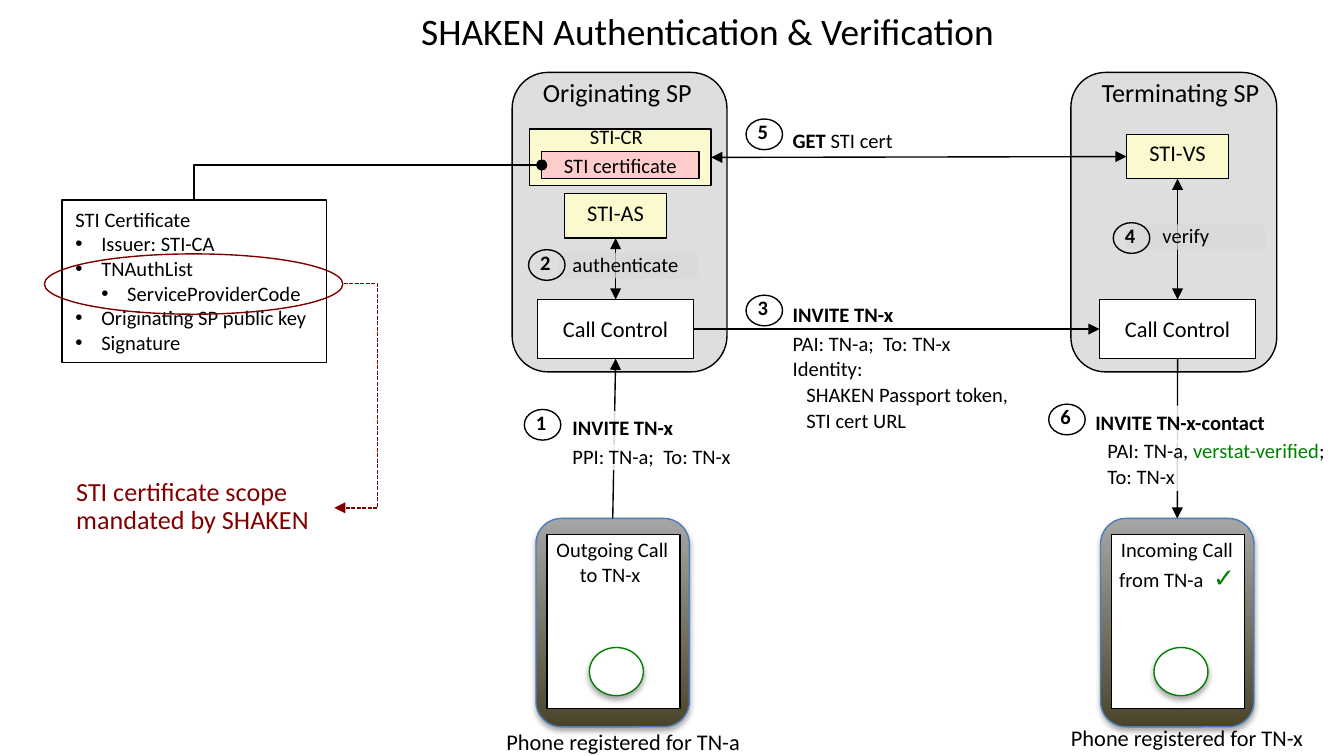
import pptx
import pptx.util
import pptx.dml.color
import pptx.enum.dml
import pptx.enum.shapes
import pptx.enum.text
import pptx.oxml.ns

Cm, Pt = pptx.util.Cm, pptx.util.Pt
RGB = pptx.dml.color.RGBColor
KIND = pptx.enum.shapes.MSO_SHAPE
WIRE = pptx.enum.shapes.MSO_CONNECTOR
ALIGN = pptx.enum.text.PP_ALIGN
ANCHOR = pptx.enum.text.MSO_ANCHOR
DASH = pptx.enum.dml.MSO_LINE
qn = pptx.oxml.ns.qn

BLACK = RGB(0x00, 0x00, 0x00)
WHITE = RGB(0xFF, 0xFF, 0xFF)
GRAY = RGB(0xD9, 0xD9, 0xD9)
CREAM = RGB(0xFF, 0xFF, 0xCC)
PINK = RGB(0xFF, 0xCC, 0xCC)
MAROON = RGB(0x80, 0x00, 0x00)
GREEN = RGB(0x00, 0x80, 0x00)
BLUE = RGB(0x4B, 0x7E, 0xBC)
OLIVE = RGB(0x4A, 0x45, 0x2A)
SILVER = RGB(0xA6, 0xA6, 0xA6)

TOP, LEFT, BOTTOM, RIGHT = range(4)
BOLD = {"bold": True}
# frame and paragraph values for each kind of text
PLAIN = ({"word_wrap": False}, {})
MID = ({"vertical_anchor": ANCHOR.MIDDLE, "margin_top": 0, "margin_bottom": 0},
       {"alignment": ALIGN.CENTER})
NODE = ({"vertical_anchor": ANCHOR.TOP, "margin_top": Cm(0.1)},
        {"alignment": ALIGN.CENTER})
SCREEN = ({"word_wrap": True}, {"alignment": ALIGN.CENTER})
LABEL = ({"word_wrap": False}, {"line_spacing": 0.9, "space_before": Pt(6)})
NOTE = ({"word_wrap": True, "margin_top": Cm(0.03), "margin_bottom": Cm(0.03)},
        {"line_spacing": 0.9, "space_before": Pt(2)})
LIST = ({"word_wrap": False, "vertical_anchor": ANCHOR.TOP,
         "auto_size": pptx.enum.text.MSO_AUTO_SIZE.NONE},
        {"space_before": Pt(0)})


def add_xml(parent, tag, **attrs):
    node = parent.makeelement(qn(tag), attrs)
    parent.append(node)
    return node


class Sketch:
    def __init__(self, slide, font="Calibri"):
        self.slide, self.shapes, self.font = slide, slide.shapes, font

    def put(self, shape, text, size, style, color=BLACK, **look):
        """Fill a shape with paragraphs, each a string or (text, look) runs."""
        frame = shape.text_frame
        looks, rules = style
        for key, value in looks.items():
            setattr(frame, key, value)
        rows = [text] if isinstance(text, str) else text
        for i, row in enumerate(rows):
            para = frame.add_paragraph() if i else frame.paragraphs[0]
            for key, value in rules.items():
                setattr(para, key, value)
            for words, extra in [(row, {})] if isinstance(row, str) else row:
                run = para.add_run()
                run.text = words
                values = {"name": self.font, "size": Pt(size), **look, **extra}
                run.font.color.rgb = values.pop("color", color)
                for key, value in values.items():
                    setattr(run.font, key, value)

    def paint(self, shape, fill, alpha):
        if fill is None:
            shape.fill.background()
            return
        shape.fill.solid()
        shape.fill.fore_color.rgb = fill
        if alpha < 100:
            solid = shape._element.spPr.find(qn("a:solidFill"))
            add_xml(solid[0], "a:alpha", val=str(alpha * 1000))

    def box(self, kind, at, fill=None, line=BLACK, alpha=100):
        shape = self.shapes.add_shape(kind, *map(Cm, at))
        shape.shadow.inherit = False
        self.paint(shape, fill, alpha)
        if line is None:
            shape.line.fill.background()
        else:
            shape.line.color.rgb = line
            shape.line.width = Pt(0.75)
        return shape

    def text(self, at, text, size, style, fill=None, **look):
        shape = self.shapes.add_textbox(*map(Cm, at))
        self.paint(shape, fill, 84)
        self.put(shape, text, size, style, **look)
        return shape

    def badge(self, num, x, y):
        ring = self.box(KIND.OVAL, (x + 0.03, y + 0.07, 0.69, 0.58))
        digit = self.text((x, y, 0.84, 0.69), num, 11, LABEL, **BOLD)
        self.shapes.add_group_shape([digit, ring])

    def shade(self, shape):
        drop = add_xml(shape._element.spPr.find(qn("a:effectLst")), "a:outerShdw",
                       blurRad="39400", dist="22900", dir="5400000", rotWithShape="0")
        add_xml(add_xml(drop, "a:srgbClr", val="000000"), "a:alpha", val="35000")

    def phone(self, x, y, text, high, title):
        case = self.box(KIND.ROUNDED_RECTANGLE, (x, 9.8, 2.9, 3.94), WHITE, BLUE)
        case.fill.gradient()
        case.fill.gradient_angle = 90
        for stop, color in zip(case.fill.gradient_stops, (OLIVE, SILVER)):
            stop.color.rgb = color
        self.shade(case)
        self.box(KIND.RECTANGLE, (x + 0.21, 10.11, 2.51, 3.28), WHITE)
        self.text((x - 0.51, 10.03, 3.91, high), text, 11, SCREEN)
        self.shade(self.box(KIND.OVAL, (x + 1.01, 12.24, 1.02, 0.91), WHITE, GREEN))
        self.text((x - 0.81, y, 4.98, 0.76), title, 12, PLAIN)
        return case

    def wire(self, ends, kind=WIRE.STRAIGHT, color=BLACK, head=None, tail=None):
        wire = self.shapes.add_connector(kind, *map(Cm, ends))
        wire.line.color.rgb = color
        wire.line.width = Pt(0.75)
        for tag, mark in (("a:headEnd", head), ("a:tailEnd", tail)):
            if mark:
                add_xml(wire.line._get_or_add_ln(), tag, type=mark)
        add_xml(wire._element.spPr, "a:effectLst")
        return wire

    def link(self, start, side, end, other, **marks):
        wire = self.wire((0, 0, 0, 0), **marks)
        wire.begin_connect(start, side)
        wire.end_connect(end, other)


def main():
    deck = pptx.Presentation()
    deck.slide_width, deck.slide_height = Cm(25.4), Cm(14.29)
    slide = deck.slides.add_slide(deck.slide_layouts[1])
    art = Sketch(slide)
    title, body = slide.placeholders
    for shape, at in ((title, (7.62, 0.03, 11.51, 1.12)), (body, (1.17, 3.78, 5, 3.07))):
        shape.left, shape.top, shape.width, shape.height = map(Cm, at)
    art.put(title, "SHAKEN Authentication & Verification", 20, LIST)
    art.put(body, ["STI Certificate", "Issuer: STI-CA", "TNAuthList", "ServiceProviderCode",
                   "Originating SP public key", "Signature"], 11, LIST)
    body.line.color.rgb = BLACK
    body.line.width = Pt(0.75)
    for para, level in zip(body.text_frame.paragraphs, (0, 1, 1, 2, 1, 1)):
        para.level = max(level - 1, 0)
        props = para._p.get_or_add_pPr()
        props.set("marL", str(Cm(0.49 * level)))
        props.set("indent", str(Cm(-0.49 if level else 0)))
        if level:
            add_xml(props, "a:buFont", typeface="Arial")
            add_xml(props, "a:buChar", char="•")
        else:
            add_xml(props, "a:buNone")

    for x, wide, name, left, span in ((9.68, 4.06, "Originating SP", 10.01, 3.35),
                                      (20.24, 3.89, "Terminating SP", 20.57, 3.56)):
        art.box(KIND.ROUNDED_RECTANGLE, (x, 1.37, wide, 5.66), GRAY, alpha=85)
        art.text((left, 1.32, span, 0.86), name, 14, PLAIN)

    store = art.box(KIND.RECTANGLE, (10.01, 2.44, 3.43, 1.07), CREAM, alpha=85)
    art.text((10.9, 2.36, 1.83, 0.48), "STI-CR", 11, NOTE)
    cert = art.box(KIND.RECTANGLE, (10.24, 2.87, 2.97, 0.51), PINK)
    art.put(cert, "STI certificate", 11, MID)
    signer = art.box(KIND.RECTANGLE, (10.67, 3.66, 1.93, 0.84), CREAM, alpha=85)
    art.put(signer, "STI-AS", 12, NODE)
    checker = art.box(KIND.RECTANGLE, (21.29, 2.54, 1.93, 0.84), CREAM, alpha=85)
    art.put(checker, "STI-VS", 12, NODE)
    calls = [art.box(KIND.RECTANGLE, (x, 5.66, 2.95, 1.12), WHITE) for x in (10.16, 20.78)]
    for call in calls:
        art.put(call, "Call Control", 12, MID)

    caller = art.phone(10.13, 13.64, ["Outgoing Call", "to TN-x "], 1.19,
                       "Phone registered for TN-a")
    tick = {"name": "Arial", "size": Pt(14), "color": GREEN, "bold": True}
    callee = art.phone(20.8, 13.56, ["Incoming Call", [("from TN-a  ", {}), ("✓", tick)]],
                       1.32, "Phone registered for TN-x")

    both = {"head": "triangle", "tail": "triangle"}
    art.link(calls[0], BOTTOM, caller, TOP, head="triangle")
    art.link(callee, TOP, calls[1], BOTTOM, head="triangle")
    art.link(signer, BOTTOM, calls[0], TOP, **both)
    art.link(checker, BOTTOM, calls[1], TOP, **both)

    for x, y, left, wide, word in ((10.57, 4.78, 10.57, 3.12, "authenticate"),
                                   (21.29, 4.24, 21.72, 2.18, "verify")):
        art.box(KIND.ROUNDED_RECTANGLE, (x, y, 2.62, 0.48), GRAY, None, 73)
        art.text((left, y, wide, 0.48), word, 11, NOTE)

    for x, y, wide, bold, rest in ((10.57, 7.77, 2.77, "INVITE TN-x", ""),
                                   (14.73, 5.64, 2.77, "INVITE TN-x", ""),
                                   (14.73, 2.34, 2.41, "GET ", "STI cert"),
                                   (20.45, 7.67, 3.76, "INVITE TN-x-contact", "")):
        runs = [(bold, BOLD)] + ([(rest, {})] if rest else [])
        art.text((x, y, wide, 0.69), [runs], 11, LABEL, WHITE)

    art.text((10.57, 8.41, 4.32, 0.48), "PPI: TN-a;  To: TN-x", 11, NOTE, WHITE)
    token = art.text((14.73, 6.27, 5.08, 1.96),
                     ["PAI: TN-a;  To: TN-x", "Identity:", "SHAKEN Passport token,",
                      "STI cert URL"], 11, NOTE, WHITE)
    for para in token.text_frame.paragraphs[2:]:
        para._p.get_or_add_pPr().set("marL", str(Cm(0.26)))
    state = [("PAI: TN-a, ", {}), ("verstat-verified", {"color": GREEN}), (";", {})]
    art.text((20.68, 8.31, 4.72, 0.97), [state, "To: TN-x"], 11, NOTE, WHITE)
    art.text((1.19, 9.02, 5.13, 1.14), "STI certificate scope mandated by SHAKEN",
             14, NOTE, WHITE, color=MAROON)

    art.link(calls[1], LEFT, calls[0], RIGHT, head="triangle")
    art.link(checker, LEFT, store, RIGHT, **both)
    for num, x, y in (("1", 9.88, 7.67), ("2", 9.96, 4.65), ("3", 14.07, 5.51),
                      ("4", 21.01, 4.14), ("5", 14.07, 2.18), ("6", 19.79, 7.57)):
        art.badge(num, x, y)

    corner = art.wire((10.24, 3.12, 3.67, 3.78), WIRE.ELBOW, head="oval")
    corner._element.spPr.find(qn("a:prstGeom")).set("prst", "bentConnector2")
    art.box(KIND.OVAL, (0.84, 4.8, 5.64, 1.14), line=MAROON)
    scope = art.wire((6.5, 5.36, 6.32, 9.6), WIRE.ELBOW, MAROON, tail="triangle")
    scope.line.dash_style = DASH.SQUARE_DOT
    bend = scope._element.spPr.find(qn("a:prstGeom")).find(qn("a:avLst"))
    add_xml(bend, "a:gd", name="adj1", fmla="val -355000")
    deck.save("out.pptx")


if __name__ == "__main__":
    main()
